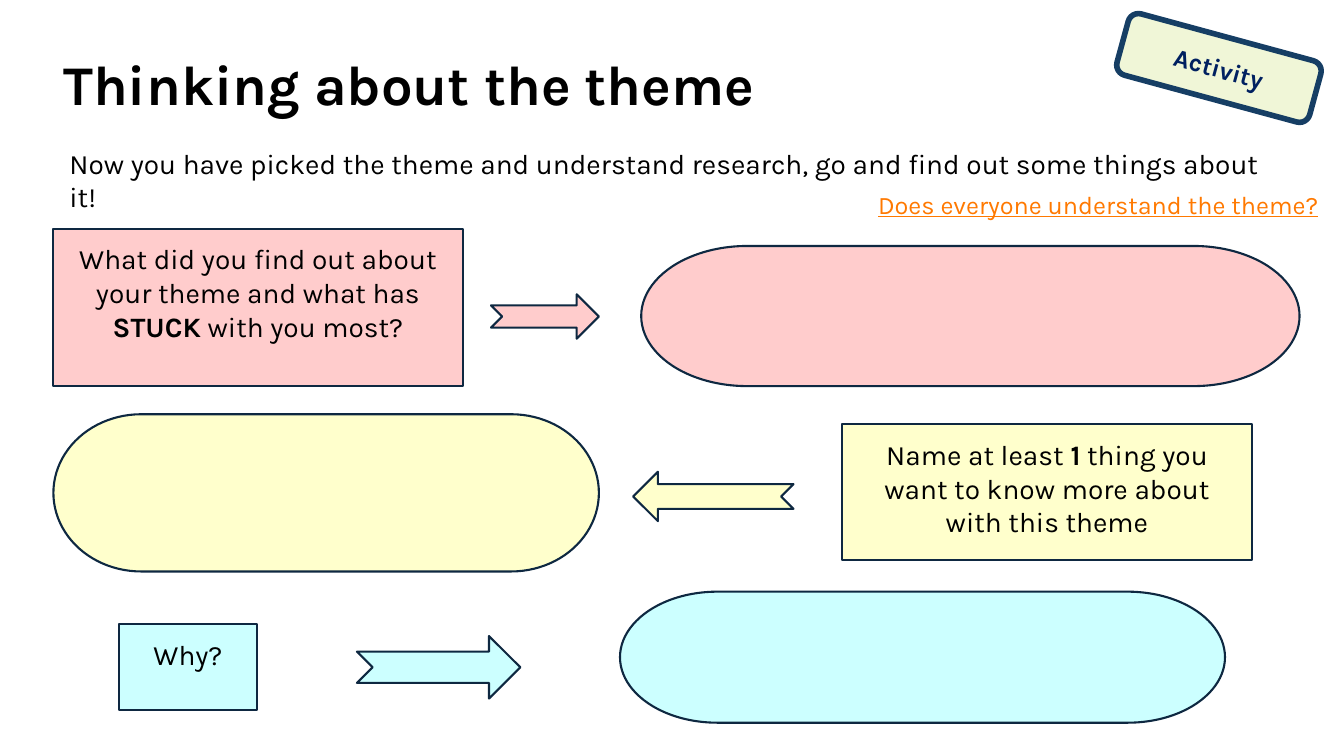
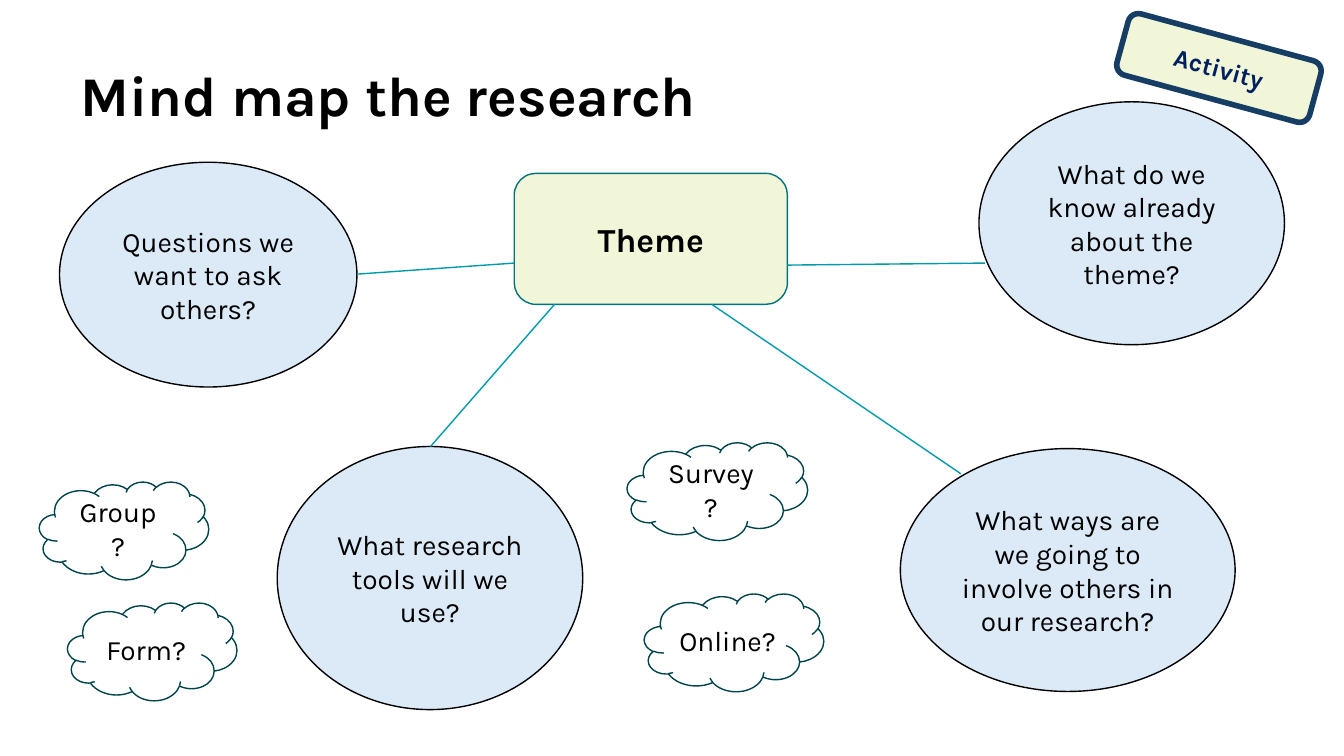
import lxml.etree
import pptx
import pptx.dml.color
import pptx.enum.shapes
import pptx.enum.text
import pptx.oxml.ns
import pptx.util

RGB = pptx.dml.color.RGBColor
KIND = pptx.enum.shapes.MSO_SHAPE
ALIGN = pptx.enum.text.PP_ALIGN
ANCHOR = pptx.enum.text.MSO_ANCHOR

PX = 9144
FONT = "Karla"
BLACK = RGB(0x00, 0x00, 0x00)
NAVY = RGB(0x0E, 0x28, 0x41)
INK = RGB(0x00, 0x20, 0x60)
FRAME = RGB(0x16, 0x3E, 0x64)
ORANGE = RGB(0xFF, 0x79, 0x00)
PINK = RGB(0xFF, 0xCC, 0xCC)
YELLOW = RGB(0xFF, 0xFF, 0xCC)
AQUA = RGB(0xCC, 0xFF, 0xFF)
LIME = RGB(0xF0, 0xF6, 0xD7)
SKY = RGB(0xDC, 0xEA, 0xF7)
TEAL = RGB(0x00, 0x73, 0x7E)
DEEP = RGB(0x00, 0x44, 0x4B)
LINK = RGB(0x00, 0x9B, 0xAA)

PLAIN = {"size": 20}
TITLE = {"size": 40, "bold": True}
THEME = {"size": 24, "bold": True}
TAG = {"size": 18, "bold": True, "color": INK}
PROMPT = {"size": 18, "underline": True, "color": ORANGE}

ROWS = [
    (PINK, (53, 227, 406, 156), (487, 292, 107, 44), (636, 244, 653, 139), 0,
     ["What did you find out about your theme and what has ", "STUCK", " with you most?"]),
    (YELLOW, (835, 421, 407, 135), (628, 468, 159, 49), (53, 411, 541, 156), 180,
     ["Name at least ", "1", " thing you want to know more about with this theme"]),
    (AQUA, (118, 619, 137, 85), (354, 631, 162, 62), (615, 587, 600, 130), 0,
     ["Why?"]),
]
BUBBLES = [
    ((59, 161, 295, 223), "Questions we want to ask others?"),
    ((275, 443, 303, 261), "What research tools will we use?"),
    ((893, 445, 332, 241), "What ways are we going to involve others in our research?"),
    ((971, 101, 303, 241), "What do we know already about the theme?"),
]
CLOUDS = [
    ((622, 439, 179, 97), "Survey?"),
    ((639, 589, 178, 97), "Online?"),
    ((39, 478, 168, 97), "Group?"),
    ((67, 598, 168, 97), "Form?"),
]
SPOKES = [
    (706, 302, 953, 470),
    (354, 272, 510, 261),
    (550, 302, 427, 443),
    (781, 263, 977, 261),
]


def scale(box):
    """Turn px lengths into EMU."""
    return [pptx.util.Emu(n * PX) for n in box]


def style(font, look):
    """Set a font from a dict of format values."""
    look = {"name": FONT, "color": BLACK, **look}
    font.color.rgb = look.pop("color")
    look["size"] = pptx.util.Pt(look["size"])
    for key, value in look.items():
        setattr(font, key, value)


def write(frame, parts, look, align, anchor, inset=None):
    """Fill a text frame with runs, every second one bold."""
    values = {"word_wrap": True, "vertical_anchor": anchor}
    if inset:
        for side in ("left", "right", "top", "bottom"):
            values["margin_" + side] = pptx.util.Emu(inset * PX)
    for key, value in values.items():
        setattr(frame, key, value)
    para = frame.paragraphs[0]
    para.alignment = align
    for i, text in enumerate(parts):
        run = para.add_run()
        run.text = text
        style(run.font, {**look, "bold": True} if i % 2 else look)
    return para


def shape(slide, kind, box, fill, line, width, turn=0):
    """Draw a flat preset shape."""
    item = slide.shapes.add_shape(kind, *scale(box))
    item.shadow.inherit = False
    item.rotation = turn
    if fill is None:
        item.fill.background()
    else:
        item.fill.solid()
        item.fill.fore_color.rgb = fill
    item.line.color.rgb = line
    item.line.width = pptx.util.Pt(width)
    return item


def label(item, text, look=PLAIN):
    """Put centred text in a shape."""
    write(item.text_frame, [text], look, ALIGN.CENTER, ANCHOR.MIDDLE)


def note(slide, box, text, look, anchor=ANCHOR.TOP):
    """Add a left-aligned text box."""
    item = slide.shapes.add_textbox(*scale(box))
    return write(item.text_frame, [text], look, ALIGN.LEFT, anchor)


def title(slide, box, text):
    """Add the slide title."""
    note(slide, box, text, TITLE, ANCHOR.MIDDLE).line_spacing = 0.9


def badge(slide):
    """Add the tilted tag in the corner."""
    label(shape(slide, KIND.ROUNDED_RECTANGLE, (1110, 36, 198, 63),
                LIME, FRAME, 4, 15.2), "Activity", TAG)


def spoke(slide, ends):
    """Draw one line of the mind map."""
    line = slide.shapes.add_connector(
        pptx.enum.shapes.MSO_CONNECTOR.STRAIGHT, *scale(ends))
    line.line.color.rgb = LINK
    line.line.width = pptx.util.Pt(1)
    lxml.etree.SubElement(line._element.spPr, pptx.oxml.ns.qn("a:effectLst"))


def row(slide, fill, card, arrow, field, turn, parts):
    """Draw a question, its arrow and the answer field."""
    shape(slide, KIND.NOTCHED_RIGHT_ARROW, arrow, fill, NAVY, 1.5, turn)
    shape(slide, KIND.FLOWCHART_TERMINATOR, field, fill, NAVY, 1.5)
    item = shape(slide, KIND.RECTANGLE, card, fill, NAVY, 1.5)
    write(item.text_frame, parts, PLAIN, ALIGN.CENTER, ANCHOR.TOP, 13)


def think(slide):
    """Build the theme slide."""
    title(slide, (53, 53, 1150, 68), "Thinking about the theme")
    for values in ROWS:
        row(slide, *values)
    note(slide, (59, 140, 1213, 44),
         "Now you have picked the theme and understand research, "
         "go and find out some things about it!", PLAIN)
    badge(slide)
    note(slide, (861, 183, 465, 40), "Does everyone understand the theme?", PROMPT)


def mind(slide):
    """Build the mind map slide."""
    title(slide, (70, 64, 1192, 68), "Mind map the research")
    label(shape(slide, KIND.FLOWCHART_ALTERNATE_PROCESS, (510, 172, 271, 130),
                LIME, TEAL, 1), "Theme", THEME)
    for box, text in BUBBLES:
        label(shape(slide, KIND.OVAL, box, SKY, BLACK, 1), text)
    for ends in SPOKES:
        spoke(slide, ends)
    for box, text in CLOUDS:
        label(shape(slide, KIND.CLOUD, box, None, DEEP, 1), text)
    badge(slide)


def main():
    """Build and save the deck."""
    deck = pptx.Presentation()
    deck.slide_width, deck.slide_height = scale((1333, 750))
    for build in (think, mind):
        build(deck.slides.add_slide(deck.slide_layouts[6]))
    deck.save("out.pptx")


if __name__ == "__main__":
    main()
